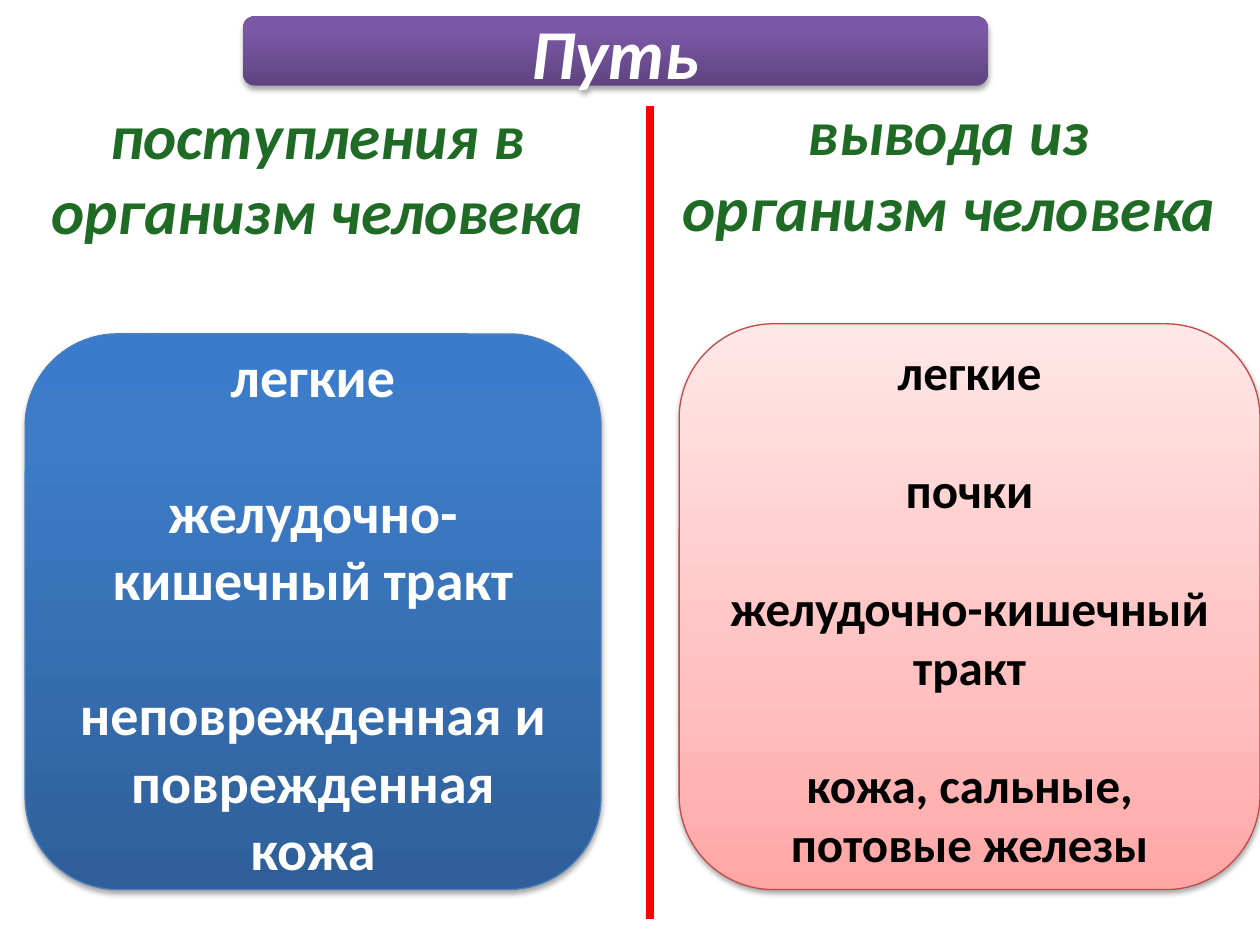
from lxml import etree
from pptx import Presentation
from pptx.dml.color import RGBColor
from pptx.enum.shapes import MSO_CONNECTOR, MSO_SHAPE
from pptx.enum.text import MSO_ANCHOR, PP_ALIGN
from pptx.oxml.ns import qn
from pptx.util import Inches, Pt

ROUNDED = MSO_SHAPE.ROUNDED_RECTANGLE
STRAIGHT = MSO_CONNECTOR.STRAIGHT
MIDDLE = MSO_ANCHOR.MIDDLE
CENTER = PP_ALIGN.CENTER
FONT = "Calibri"
LINE_HEIGHT = 1.22  # Calibri line height as a share of the font size

# Content: boxes are left, top, width, height in inches
HEADINGS = [
    ("поступления в организм человека", (0.12, 0.31, 4.8, 2.11)),
    ("вывода из организм человека", (5.24, 0.28, 4.58, 2.11)),
]
PANELS = [
    dict(items=["легкие", "желудочно-кишечный тракт",
                "неповрежденная и поврежденная кожа"],
         box=(0.2, 2.65, 4.57, 4.41), size=32, color="FFFFFF", line="4B7EBC",
         stops=[(0, "2F5F99"), (80, "3D7CC7"), (100, "3A7CCB")]),
    dict(items=["легкие", "почки", "желудочно-кишечный тракт",
                "кожа, сальные, потовые железы"],
         box=(5.39, 2.57, 4.61, 4.49), size=28, color="000000", line="BF4C48",
         stops=[(0, "FFA6A5"), (35, "FFC0BF"), (100, "FFE7E7")]),
]
BANNER = dict(items=["Путь"], box=(1.93, 0.13, 5.91, 0.55), size=40,
              color="FFFFFF", line=None, italic=True,
              stops=[(0, "5F4480"), (80, "7B58A6"), (100, "7C57A8")])
DIVIDER = dict(x=5.16, top=0.84, bottom=7.29, color="FF0000", width=4.25)


def rgb(value):
    return RGBColor.from_string(value)


def add_color(parent, value, alpha=None):
    clr = etree.SubElement(parent, qn("a:srgbClr"), val=value)
    if alpha is not None:
        etree.SubElement(clr, qn("a:alpha"), val=str(alpha * 1000))


def write(shape, items, size, color, italic=False):
    """Centred bold paragraphs, one blank line's height apart."""
    tf = shape.text_frame
    tf.word_wrap = True
    tf.vertical_anchor = MIDDLE
    tf.text = "\n".join(items)
    for i, p in enumerate(tf.paragraphs):
        p.alignment = CENTER
        if i:
            p.space_before = Pt(round(size * LINE_HEIGHT))
        for r in p.runs:
            r.font.name, r.font.size = FONT, Pt(size)
            r.font.bold, r.font.italic = True, italic
            r.font.color.rgb = rgb(color)


def add_panel(slide, items, box, size, color, line, stops, italic=False):
    sp = slide.shapes.add_shape(ROUNDED, *map(Inches, box))
    # Gradient running from bottom to top
    sp.fill.gradient()
    sp.fill.gradient_angle = 90
    sp_pr = sp._element.spPr
    gs_list = sp_pr.find(".//" + qn("a:gsLst"))
    for gs in list(gs_list):
        gs_list.remove(gs)
    for position, stop_color in stops:
        gs = etree.SubElement(gs_list, qn("a:gs"), pos=str(position * 1000))
        add_color(gs, stop_color)
    # Outline
    if line:
        sp.line.color.rgb = rgb(line)
        sp.line.width = Pt(0.75)
    else:
        sp.line.fill.background()
    # Soft shadow below
    sp.shadow.inherit = False
    shadow = etree.SubElement(
        sp_pr.find(qn("a:effectLst")), qn("a:outerShdw"),
        blurRad=str(Pt(3.1)), dist=str(Pt(1.8)), dir="5400000", rotWithShape="0")
    add_color(shadow, "000000", 35)
    write(sp, items, size, color, italic)


prs = Presentation()
prs.slide_width, prs.slide_height = Inches(10), Inches(7.5)
slide = prs.slides.add_slide(prs.slide_layouts[6])

# Column headings
for text, box in HEADINGS:
    write(slide.shapes.add_textbox(*map(Inches, box)), [text], 36, "1F6B26", True)

# Lists of organs
for panel in PANELS:
    add_panel(slide, **panel)

# Divider between the columns
x = Inches(DIVIDER["x"])
divider = slide.shapes.add_connector(
    STRAIGHT, x, Inches(DIVIDER["top"]), x, Inches(DIVIDER["bottom"]))
divider.line.color.rgb = rgb(DIVIDER["color"])
divider.line.width = Pt(DIVIDER["width"])
etree.SubElement(divider._element.spPr, qn("a:effectLst"))

# Title banner
add_panel(slide, **BANNER)

prs.save("out.pptx")
